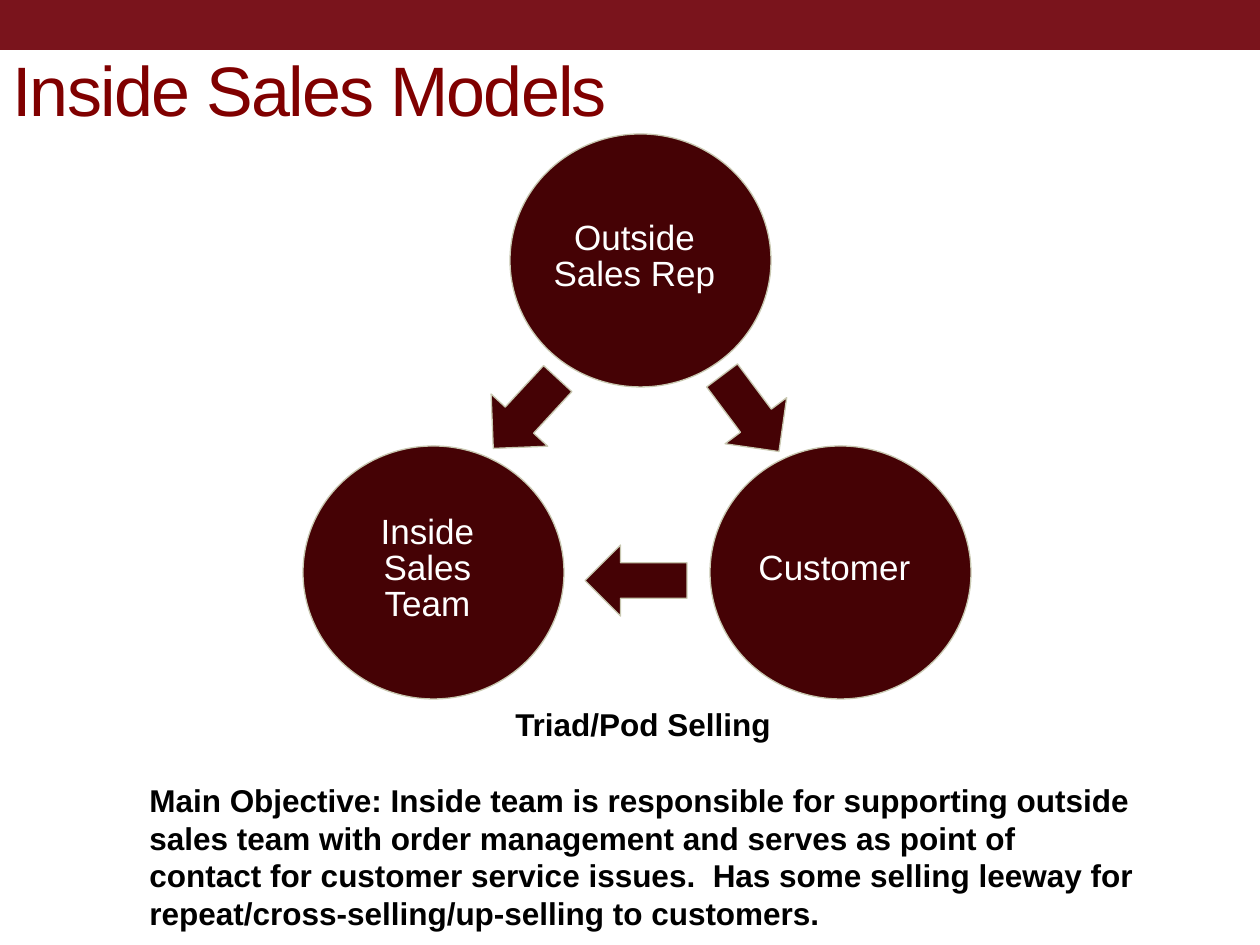
from dataclasses import dataclass

from lxml.etree import SubElement
from pptx import Presentation
from pptx.dml.color import RGBColor as Color
from pptx.enum.shapes import MSO_SHAPE as Shape
from pptx.enum.text import MSO_ANCHOR as Anchor, PP_ALIGN as Align
from pptx.util import Emu, Pt

PX = 914400 / 126
PAGE_WIDTH, PAGE_HEIGHT = 1260, 945


@dataclass(frozen=True)
class Theme:
    font: str = "Arial"
    bar: Color = Color(0x7A, 0x14, 0x1C)
    title: Color = Color(0x80, 0x00, 0x00)
    node: Color = Color(0x45, 0x02, 0x05)
    outline: Color = Color(0xC8, 0xC8, 0xB1)
    node_text: Color = Color(0xFF, 0xFF, 0xFF)
    body: Color = Color(0x00, 0x00, 0x00)
    title_size: int = 40
    node_size: int = 20
    body_size: int = 18


THEME = Theme()


def px(length):
    return Emu(round(length * PX))


def place(box):
    return [px(length) for length in box]


def style(para, size, color, bold=False, align=Align.LEFT):
    para.font.name = THEME.font
    para.font.size = Pt(size)
    para.font.color.rgb = color
    para.font.bold = bold
    para.alignment = align


def add_solid(page, kind, box, fill, outline=None):
    shape = page.shapes.add_shape(kind, *place(box))
    shape.shadow.inherit = False
    shape.fill.solid()
    shape.fill.fore_color.rgb = fill
    if outline is None:
        shape.line.fill.background()
    else:
        shape.line.color.rgb = outline
        shape.line.width = Pt(0.75)
    return shape


def add_text_frame(page, box, anchor):
    frame = page.shapes.add_textbox(*place(box)).text_frame
    frame.word_wrap = True
    frame.vertical_anchor = anchor
    return frame


def add_header(page, box):
    left, top, width, height = box
    add_solid(page, Shape.RECTANGLE, (left, top, width, 50), THEME.bar)
    title_box = (left, top + 21, width - 126, height - 21)
    para = add_text_frame(page, title_box, Anchor.MIDDLE).paragraphs[0]
    span = para.add_run()
    span.text = "Inside Sales Models"
    style(para, THEME.title_size, THEME.title)
    span.font._element.set("spc", "-100")


def add_node(page, box, label):
    node = add_solid(page, Shape.OVAL, box, THEME.node, THEME.outline)
    frame = node.text_frame
    frame.word_wrap = True
    frame.vertical_anchor = Anchor.MIDDLE
    frame.margin_left = frame.margin_top = 0
    frame.margin_right, frame.margin_bottom = px(12), px(6)
    para = frame.paragraphs[0]
    para.text = label
    para.line_spacing = 0.86
    style(para, THEME.node_size, THEME.node_text, align=Align.CENTER)


def add_triad(page, box):
    left, top, width, height = box
    node_width, node_height = 261, 253
    right, bottom = width - node_width, height - node_height
    nodes = [
        ("Inside Sales Team", 0, bottom),
        ("Customer", right, bottom),
        ("Outside Sales Rep", 207, 0),
    ]
    arrows = [
        (282, 411, 102, 71, 180),
        (175, 241, 95, 77, 132.7),
        (400, 241, 95, 77, 53.2),
    ]
    for label, x, y in nodes:
        add_node(page, (left + x, top + y, node_width, node_height), label)
    for x, y, arrow_width, arrow_height, angle in arrows:
        arrow_box = (left + x, top + y, arrow_width, arrow_height)
        arrow = add_solid(page, Shape.RIGHT_ARROW, arrow_box, THEME.node, THEME.outline)
        arrow.rotation = angle


def add_summary(page, box):
    frame = add_text_frame(page, box, Anchor.TOP)
    heading = frame.paragraphs[0]
    heading.text = "Triad/Pod Selling"
    style(heading, THEME.body_size, THEME.body, bold=True, align=Align.CENTER)
    objective = frame.add_paragraph()
    objective.text = (
        "Main Objective: Inside team is responsible for supporting outside "
        "sales team with order management and serves as point of contact for "
        "customer service issues.  Has some selling leeway for "
        "repeat/cross-selling/up-selling to customers."
    )
    objective.space_before = Pt(21.6)
    style(objective, THEME.body_size, THEME.body, bold=True)


def main():
    deck = Presentation()
    deck.slide_width, deck.slide_height = px(PAGE_WIDTH), px(PAGE_HEIGHT)
    page = deck.slides.add_slide(deck.slide_layouts[6])
    add_header(page, (0, 0, PAGE_WIDTH, 157))
    add_summary(page, (137, 699, 1012, 242))
    add_triad(page, (303, 134, 668, 565))
    deck.save("out.pptx")


if __name__ == "__main__":
    main()
